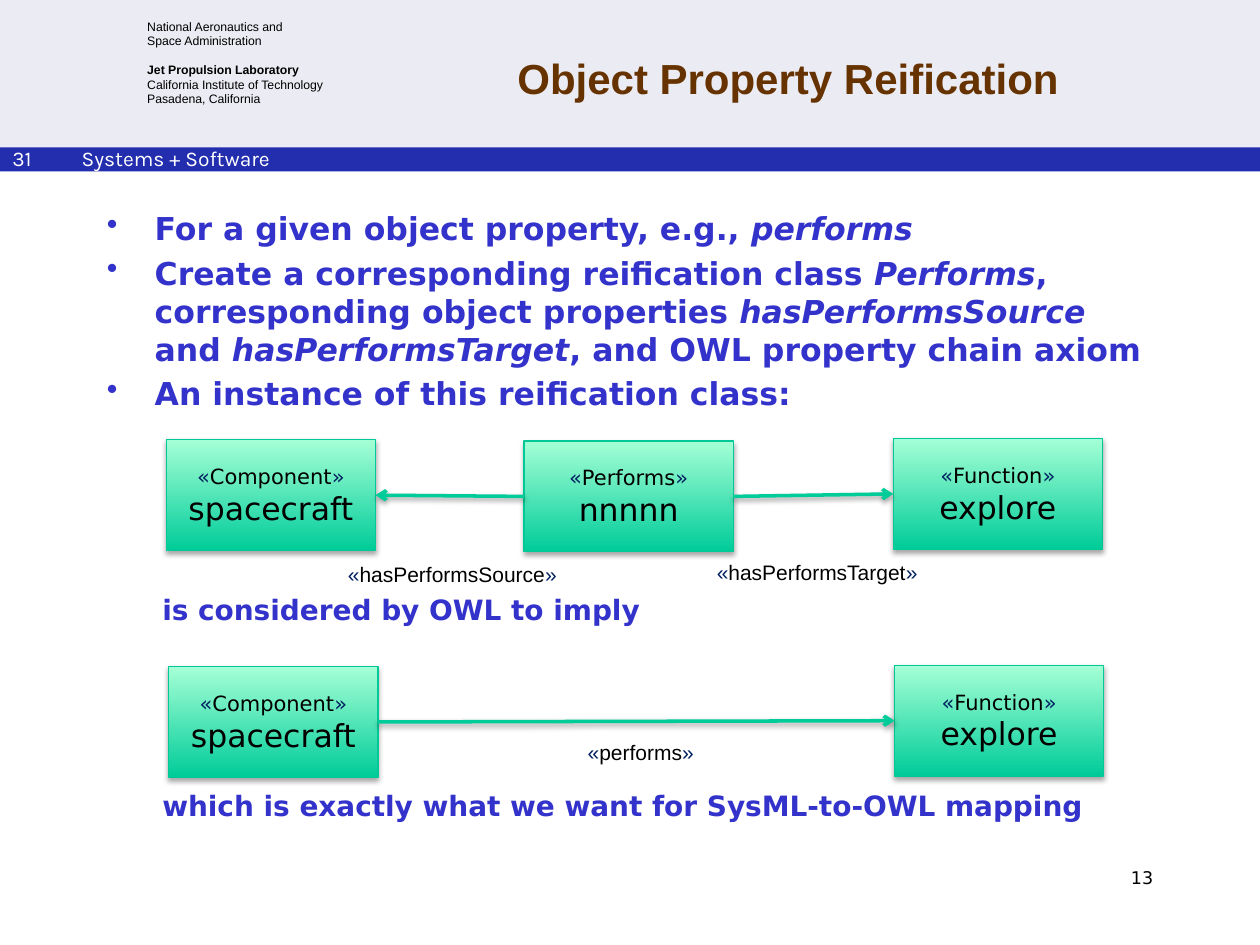
import pptx
import pptx.util
import pptx.dml.color
import pptx.enum.shapes
import pptx.enum.text
import pptx.oxml
import pptx.oxml.ns
from pptx.util import Inches, Pt

COLORS = {
    "band": "EBEBF3", "bar": "232EAE", "title": "663300", "body": "3333CC",
    "mark": "002060", "edge": "00C896", "deep": "00CC99", "pale": "A5FFD6",
    "black": "000000", "white": "FFFFFF",
}
SANS, ARIAL, KARLA = "DejaVu Sans", "Arial", "Karla"
TITLE = "Object Property Reification"

# Header lines: text, bold, space before
HEADER = [
    ("National Aeronautics and", False, 0),
    ("Space Administration", False, 0),
    ("Jet Propulsion Laboratory", True, 8),
    ("California Institute of Technology", False, 0),
    ("Pasadena, California", False, 0),
]
# Bullets: plain and italic pieces take turns
BULLETS = [
    ["For a given object property, e.g., ", "performs"],
    ["Create a corresponding reification class ", "Performs",
     ", corresponding object properties ", "hasPerformsSource",
     " and ", "hasPerformsTarget", ", and OWL property chain axiom"],
    ["An instance of this reification class:"],
]
# Linking lines: text, top
LINKS = [
    ("is considered by OWL to imply", 4.65),
    ("which is exactly what we want for SysML-to-OWL mapping", 6.21),
]
# Boxes: key -> stereotype, name, left, top
BOX_W, BOX_H = 1.66, 0.88
BOXES = {
    "craft": ("Component", "spacecraft", 1.32, 3.49),
    "goal": ("Function", "explore", 7.09, 3.48),
    "link": ("Performs", "nnnnn", 4.16, 3.5),
    "craft2": ("Component", "spacecraft", 1.34, 5.29),
    "goal2": ("Function", "explore", 7.1, 5.28),
}
# Arrows: start box, side, end box, side (1 left, 3 right)
ARROWS = [("link", 1, "craft", 3), ("link", 3, "goal", 1),
          ("craft2", 3, "goal2", 1)]
# Arrow labels: text, left, top, width
LABELS = [
    ("hasPerformsSource", 2.65, 4.41, 1.88),
    ("hasPerformsTarget", 5.58, 4.39, 1.81),
    ("performs", 4.56, 5.82, 1.05),
]

ALIGN = pptx.enum.text.PP_ALIGN
MIDDLE = pptx.enum.text.MSO_ANCHOR.MIDDLE
RECT = pptx.enum.shapes.MSO_SHAPE.RECTANGLE
STRAIGHT = pptx.enum.shapes.MSO_CONNECTOR.STRAIGHT

deck = pptx.Presentation()
deck.slide_width, deck.slide_height = Inches(10), Inches(7.5)
slide = deck.slides.add_slide(deck.slide_layouts[5])
shapes = slide.shapes


def rgb(key):
    return pptx.dml.color.RGBColor.from_string(COLORS[key])


def style(font, face, size, color, bold=False):
    font.name, font.size, font.bold = face, Pt(size), bold
    font.color.rgb = rgb(color)


def add_xml(parent, tag, body="", attrs=""):
    space = pptx.oxml.ns.nsdecls("a")
    node = pptx.oxml.parse_xml(f"<a:{tag} {space} {attrs}>{body}</a:{tag}>")
    parent.append(node)


def add_shadow(shape, alpha, dist):
    body = (f'<a:outerShdw blurRad="{Pt(3.1)}" dist="{Pt(dist)}" dir="5400000" '
            f'rotWithShape="0"><a:srgbClr val="{COLORS["black"]}">'
            f'<a:alpha val="{alpha * 1000}"/></a:srgbClr></a:outerShdw>')
    add_xml(shape._element.spPr, "effectLst", body)


def add_rect(left, top, width, height):
    rect = shapes.add_shape(RECT, Inches(left), Inches(top),
                            Inches(width), Inches(height))
    return rect


def add_band(top, height, color):
    band = add_rect(0, top, 10, height)
    band.shadow.inherit = False
    band.fill.solid()
    band.fill.fore_color.rgb = rgb(color)
    band.line.fill.background()


def add_text(left, top, width, height, wrap=True):
    box = shapes.add_textbox(Inches(left), Inches(top),
                             Inches(width), Inches(height))
    box.text_frame.word_wrap = wrap
    return box.text_frame


def add_line(left, top, width, height, text, face, size, color, bold=False):
    par = add_text(left, top, width, height).paragraphs[0]
    par.text = text
    style(par.font, face, size, color, bold)
    return par


def add_quoted(par, word, face):
    par.alignment = ALIGN.CENTER
    for text, color in (("«", "mark"), (word, "black"), ("»", "mark")):
        run = par.add_run()
        run.text = text
        style(run.font, face, 12, color)


# Header band, agency lines and blue bar
add_band(0, 1.36, "band")
frame = add_text(1.07, 0.1, 1.62, 0.8, wrap=False)
for i, (text, bold, gap) in enumerate(HEADER):
    par = frame.paragraphs[0] if i == 0 else frame.add_paragraph()
    par.text = text
    par.space_before = Pt(gap)
    style(par.font, ARIAL, 7, "black", bold)
add_band(1.17, 0.19, "bar")
add_line(0, 1.11, 0.5, 0.3, "31", KARLA, 12, "white")
add_line(0.55, 1.11, 2.91, 0.3, "Systems + Software", KARLA, 12, "white")

# Title, brought in front of the band
title = shapes.title
title.left, title.top = Inches(2.64), Inches(0.17)
title.width, title.height = Inches(7.23), Inches(0.89)
title.text_frame.text = TITLE
title.text_frame.vertical_anchor = MIDDLE
par = title.text_frame.paragraphs[0]
par.alignment = ALIGN.CENTER
style(par.font, ARIAL, 24, "title", True)
shapes._spTree.append(title._element)

# Bullets
frame = add_text(0.75, 1.61, 8.5, 1.75)
for i, pieces in enumerate(BULLETS):
    par = frame.paragraphs[0] if i == 0 else frame.add_paragraph()
    props = par._p.get_or_add_pPr()
    props.set("marL", str(Inches(0.38)))
    props.set("indent", str(-Inches(0.38)))
    add_xml(props, "buChar", attrs='char="•"')
    par.space_before = Pt(3.6 if i else 0)
    par.line_spacing = Pt(21.7)
    style(par.font, SANS, 18, "body", True)
    for j, piece in enumerate(pieces):
        run = par.add_run()
        run.text = piece
        run.font.italic = j % 2 == 1

# Linking lines
for text, top in LINKS:
    add_line(1.19, top, 8.06, 0.37, text, SANS, 16, "body", True)

# Page number
par = add_line(7.17, 6.83, 2.08, 0.5, "13", SANS, 10, "black")
par.alignment = ALIGN.RIGHT

# Instance boxes
nodes = {}
for key, (kind, name, left, top) in BOXES.items():
    node = nodes[key] = add_rect(left, top, BOX_W, BOX_H)
    node.fill.gradient()
    node.fill.gradient_angle = 90
    for stop, color, place in zip(node.fill.gradient_stops,
                                  ("deep", "pale"), (0, 1)):
        stop.color.rgb = rgb(color)
        stop.position = place
    node.line.color.rgb = rgb("edge")
    node.line.width = Pt(0.75)
    add_shadow(node, 35, 1.8)
    frame = node.text_frame
    frame.vertical_anchor = MIDDLE
    add_quoted(frame.paragraphs[0], kind, SANS)
    par = frame.add_paragraph()
    par.text = name
    par.alignment = ALIGN.CENTER
    style(par.font, SANS, 18, "black")

# Arrows and their labels
for start, out, end, into in ARROWS:
    arrow = shapes.add_connector(STRAIGHT, 0, 0, 0, 0)
    arrow.begin_connect(nodes[start], out)
    arrow.end_connect(nodes[end], into)
    arrow.line.color.rgb = rgb("deep")
    arrow.line.width = Pt(2)
    add_xml(arrow.line._get_or_add_ln(), "tailEnd", attrs='type="arrow"')
    add_shadow(arrow, 38, 1.6)
for text, left, top, width in LABELS:
    frame = add_text(left, top, width, 0.3, wrap=False)
    add_quoted(frame.paragraphs[0], text, ARIAL)

deck.save("out.pptx")
